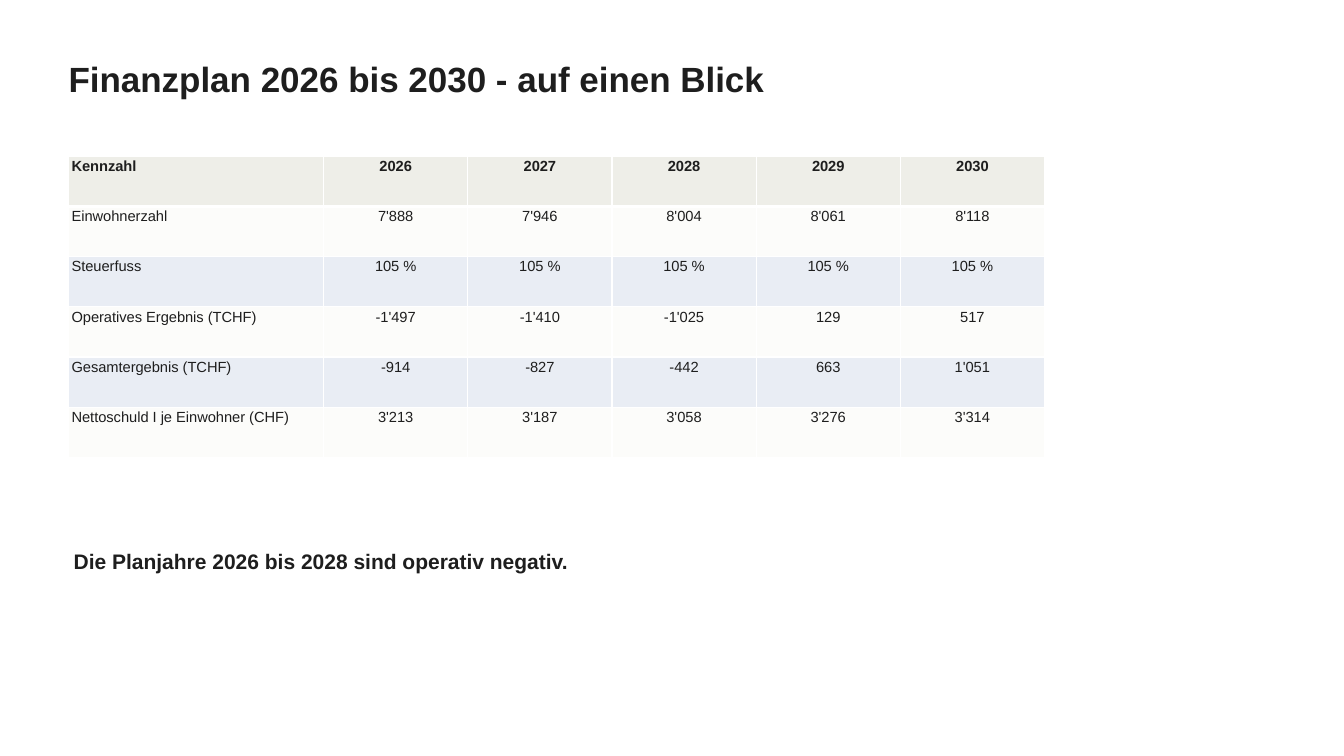
from dataclasses import dataclass

from lxml.etree import SubElement
from pptx import Presentation
from pptx.dml.color import RGBColor
from pptx.enum.text import MSO_AUTO_SIZE, PP_ALIGN
from pptx.oxml.ns import qn
from pptx.slide import Slide
from pptx.table import _Cell
from pptx.text.text import TextFrame
from pptx.util import Emu, Pt

PX = 9144  # EMU per px, 100 px to the inch
INK, WHITE = "1E1E1E", "FFFFFF"
HEAD, LIGHT, BAND = "EEEEE8", "FCFCFA", "E9EDF4"

ROWS = [
    ["Kennzahl", "2026", "2027", "2028", "2029", "2030"],
    ["Einwohnerzahl", "7'888", "7'946", "8'004", "8'061", "8'118"],
    ["Steuerfuss"] + ["105 %"] * 5,
    ["Operatives Ergebnis (TCHF)", "-1'497", "-1'410", "-1'025", "129", "517"],
    ["Gesamtergebnis (TCHF)", "-914", "-827", "-442", "663", "1'051"],
    ["Nettoschuld I je Einwohner (CHF)", "3'213", "3'187", "3'058", "3'276", "3'314"],
]


@dataclass(frozen=True)
class Label:
    text: str
    box: tuple[int, int, int, int]
    pad: tuple[int, int]
    size: float
    wrap: bool
    line: float | None = None
    after: float | None = None


LABELS = [
    Label("Finanzplan 2026 bis 2030 - auf einen Blick", (68, 52, 913, 43), (0, 5), 25, False),
    Label("Die Planjahre 2026 bis 2028 sind operativ negativ.", (71, 541, 1001, 27),
          (2, 1), 15, True, line=1.1, after=2),
]


def px(count: int) -> Emu:
    return Emu(count * PX)


def color(code: str) -> RGBColor:
    return RGBColor.from_string(code)


def write(frame: TextFrame, text: str, *, size: float, bold: bool = True,
          align: PP_ALIGN = PP_ALIGN.LEFT, line: float | None = None,
          after: float | None = None) -> None:
    para = frame.paragraphs[0]
    para.alignment = align
    if line is not None:
        para.line_spacing = line
    if after is not None:
        para.space_after = Pt(after)
    run = para.add_run()
    run.text = text
    font = run.font
    font.name, font.size, font.bold = "Arial", Pt(size), bold
    font.color.rgb = color(INK)


def add_label(slide: Slide, label: Label) -> None:
    frame = slide.shapes.add_textbox(*map(px, label.box)).text_frame
    frame.word_wrap = label.wrap
    frame.auto_size = MSO_AUTO_SIZE.SHAPE_TO_FIT_TEXT
    side, edge = map(px, label.pad)
    frame.margin_left = frame.margin_right = side
    frame.margin_top = frame.margin_bottom = edge
    write(frame, label.text, size=label.size, line=label.line, after=label.after)


def add_border(cell: _Cell, side: str, width: float) -> None:
    props = cell._tc.get_or_add_tcPr()
    edge = SubElement(props, qn(f"a:{side}"), w=str(Pt(width)))
    fill = SubElement(edge, qn("a:solidFill"))
    SubElement(fill, qn("a:srgbClr"), val=WHITE)


def fill_cell(cell: _Cell, text: str, row: int, col: int) -> None:
    head = row == 0
    cell.margin_left = cell.margin_right = px(3)
    cell.margin_top = cell.margin_bottom = px(2)
    # Borders go before the fill; the header rule is heavier
    for side in ("lnL", "lnR", "lnT", "lnB"):
        heavy = (head and side == "lnB") or (row == 1 and side == "lnT")
        add_border(cell, side, 3 if heavy else 1)
    cell.fill.solid()
    cell.fill.fore_color.rgb = color(HEAD if head else LIGHT if row % 2 else BAND)
    write(cell.text_frame, text, size=10.5, bold=head,
          align=PP_ALIGN.CENTER if col else PP_ALIGN.LEFT)


def add_figures(slide: Slide) -> None:
    count = len(ROWS[0])
    shape = slide.shapes.add_table(len(ROWS), count, px(68), px(155), px(968), px(299))
    table = shape.table
    for col in range(count):
        table.columns[col].width = px(143 if col else 253)
    for row, texts in enumerate(ROWS):
        for col, text in enumerate(texts):
            fill_cell(table.cell(row, col), text, row, col)


def main() -> None:
    deck = Presentation()
    deck.slide_width, deck.slide_height = px(1333), px(750)
    slide = deck.slides.add_slide(deck.slide_layouts[6])
    title, note = LABELS
    add_label(slide, title)
    add_figures(slide)
    add_label(slide, note)
    deck.save("out.pptx")


if __name__ == "__main__":
    main()
